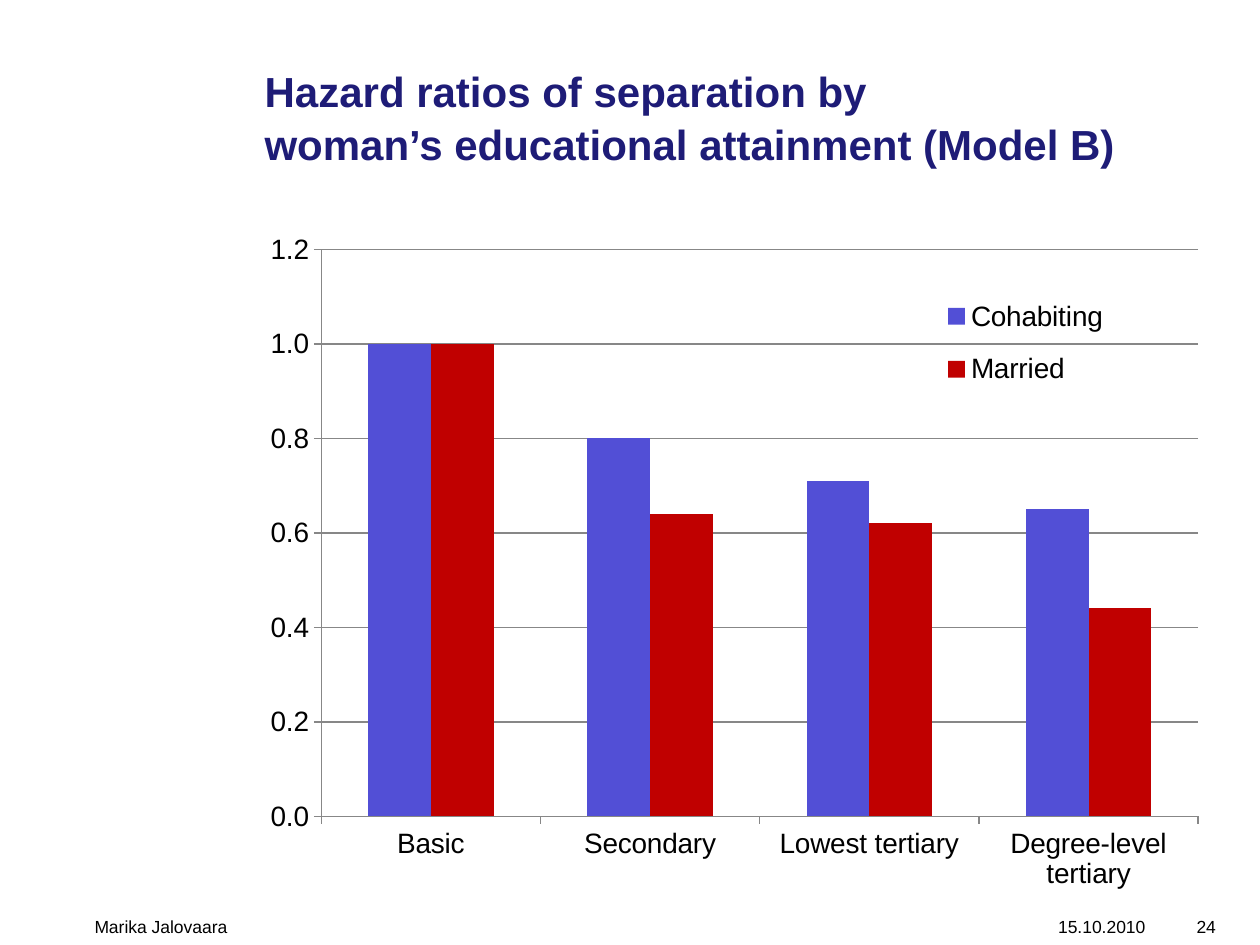
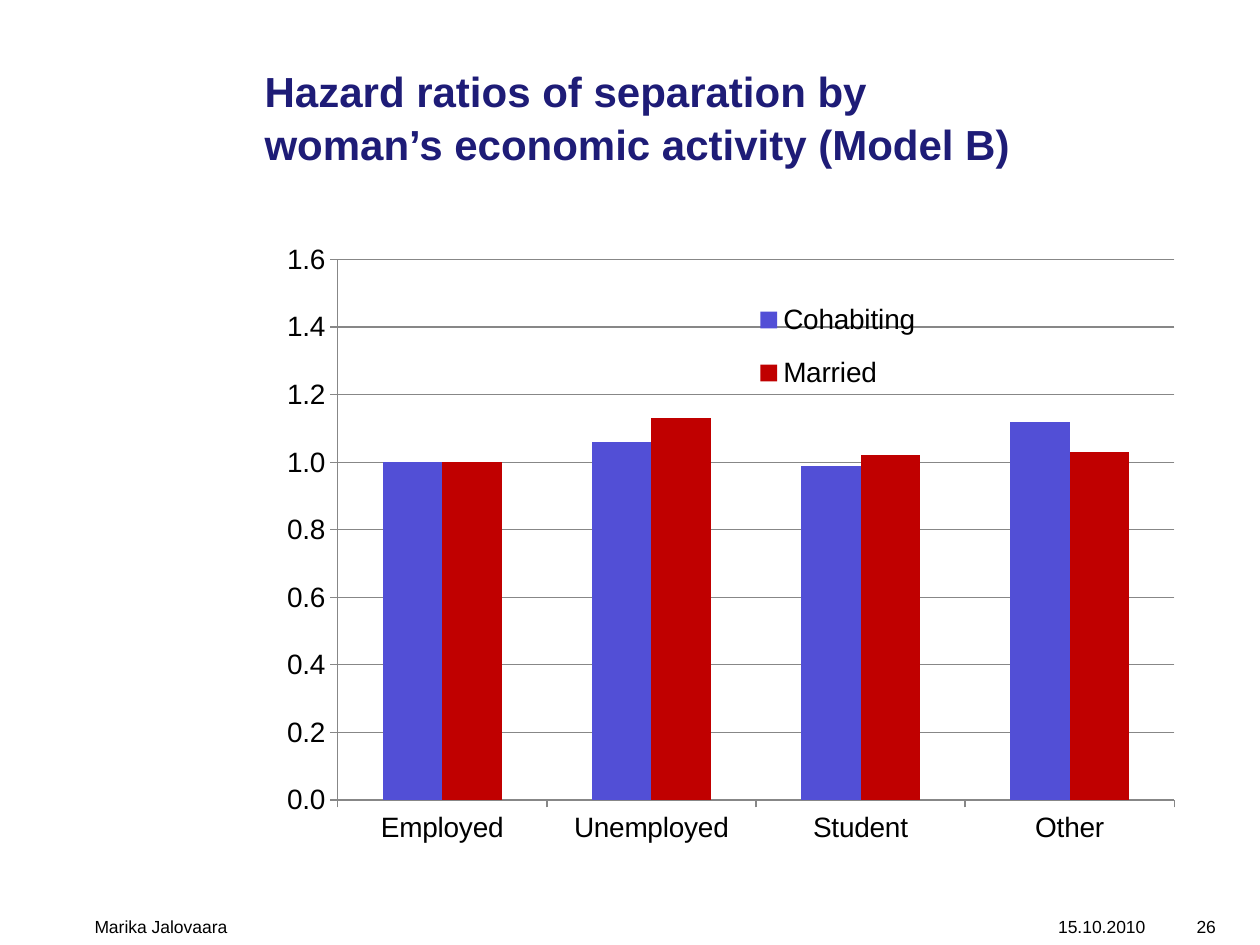
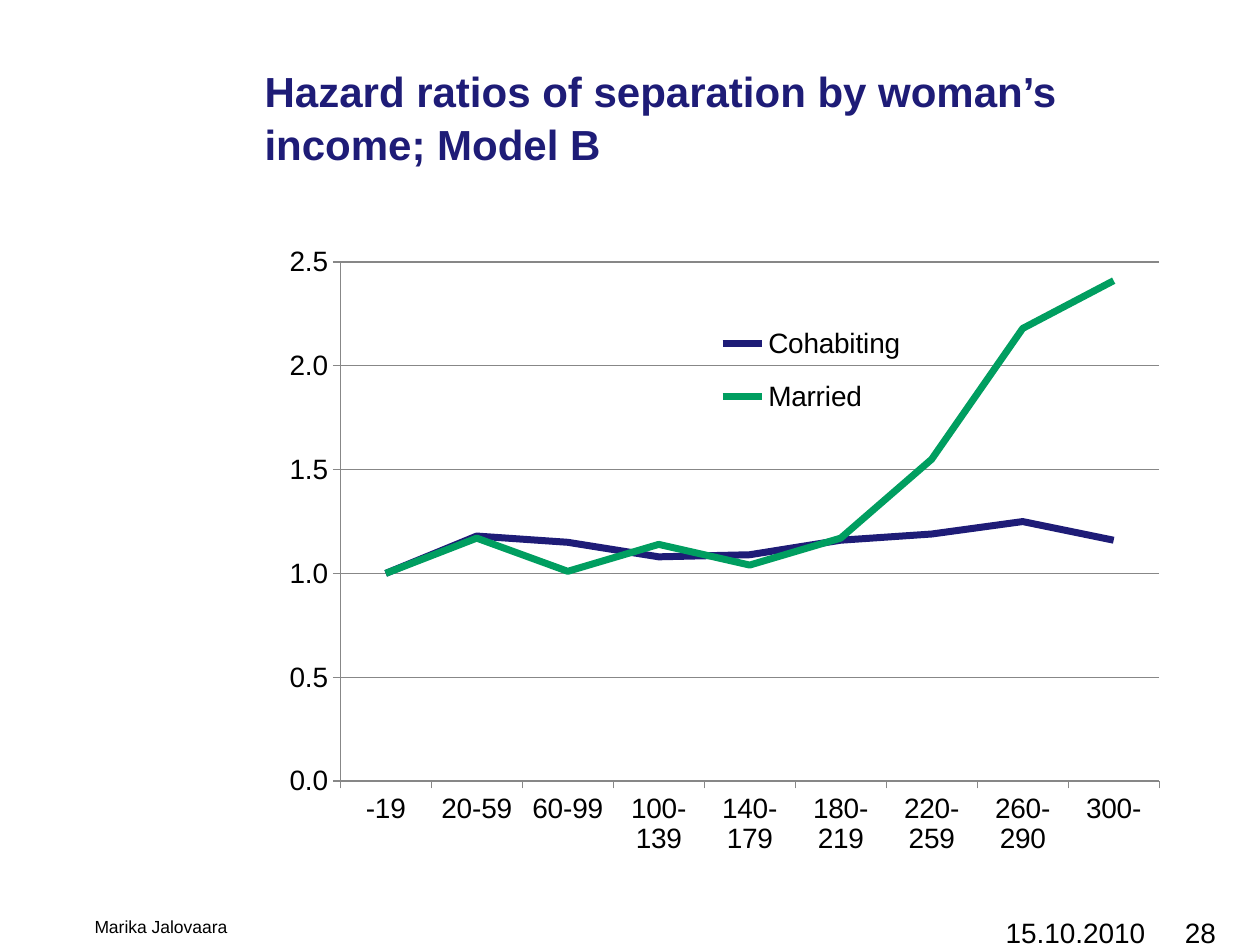
from lxml import etree
from pptx import Presentation
from pptx.chart.data import CategoryChartData
from pptx.dml.color import RGBColor
from pptx.enum.chart import XL_CHART_TYPE, XL_LEGEND_POSITION
from pptx.enum.text import MSO_ANCHOR, MSO_AUTO_SIZE, PP_ALIGN
from pptx.oxml.ns import qn
from pptx.util import Inches, Pt

COLORS = {
    "title": "1E1C77",
    "text": "000000",
    "axis": "878787",
    "blue": "524FD6",
    "red": "C00000",
    "navy": "1E1C77",
    "green": "009E60",
}
FONT = "Arial"
CHART_W, CHART_H = 7.67, 5.42


def write(tf, text, size=10, color="text", bold=False, align=PP_ALIGN.LEFT,
          anchor=MSO_ANCHOR.TOP, spacing=None):
    tf.word_wrap = True
    tf.auto_size = MSO_AUTO_SIZE.NONE
    tf.vertical_anchor = anchor
    p = tf.paragraphs[0]
    p.text = text
    p.alignment = align
    if spacing:
        p.line_spacing = Pt(spacing)
    for r in p.runs:
        r.font.name = FONT
        r.font.size = Pt(size)
        r.font.bold = bold
        r.font.color.rgb = RGBColor.from_string(COLORS[color])


def place(parent, index, box, inner=False):
    for old in parent.findall(qn("c:layout")):
        parent.remove(old)
    layout = etree.Element(qn("c:layout"))
    manual = etree.SubElement(layout, qn("c:manualLayout"))
    if inner:
        etree.SubElement(manual, qn("c:layoutTarget"), val="inner")
    for tag in ("xMode", "yMode"):
        etree.SubElement(manual, qn(f"c:{tag}"), val="edge")
    for tag, length, full in zip("xywh", box, (CHART_W, CHART_H) * 2):
        etree.SubElement(manual, qn(f"c:{tag}"), val=f"{length / full:.4f}")
    parent.insert(index, layout)


SLIDES = [
    {
        "title": "Hazard ratios of separation by\nwoman’s educational attainment (Model B)",
        "number": "24",
        "small": 10,
        "type": XL_CHART_TYPE.COLUMN_CLUSTERED,
        "cats": ["Basic", "Secondary", "Lowest tertiary", "Degree-level tertiary"],
        "series": [("Cohabiting", [1, 0.8, 0.71, 0.65], "blue"),
                   ("Married", [1, 0.64, 0.62, 0.44], "red")],
        "max": 1.2,
        "step": 0.2,
        "plot": (0.55, 0.23, 6.96, 4.5),
        "legend": (5.34, 0.46),
    },
    {
        "title": "Hazard ratios of separation by\nwoman’s economic activity (Model B)",
        "number": "26",
        "small": 10,
        "type": XL_CHART_TYPE.COLUMN_CLUSTERED,
        "cats": ["Employed", "Unemployed", "Student", "Other"],
        "series": [("Cohabiting", [1, 1.06, 0.99, 1.12], "blue"),
                   ("Married", [1, 1.13, 1.02, 1.03], "red")],
        "max": 1.6,
        "step": 0.2,
        "plot": (0.68, 0.31, 6.64, 4.29),
        "legend": (3.85, 0.49),
    },
    {
        "title": "Hazard ratios of separation by woman’s income; Model B",
        "number": "28",
        "small": 16,
        "type": XL_CHART_TYPE.LINE,
        "cats": ["-19", "20-59", "60-99", "100-139", "140-179", "180-219",
                 "220-259", "260-290", "300-"],
        "series": [("Cohabiting", [1, 1.18, 1.15, 1.08, 1.09, 1.16, 1.19, 1.25, 1.16], "navy"),
                   ("Married", [1, 1.17, 1.01, 1.14, 1.04, 1.17, 1.55, 2.18, 2.41], "green")],
        "max": 2.5,
        "step": 0.5,
        "plot": (0.7, 0.33, 6.5, 4.12),
        "legend": (3.64, 0.68),
    },
]

prs = Presentation()
prs.slide_width, prs.slide_height = Inches(10), Inches(7.5)

for item in SLIDES:
    s = prs.slides.add_slide(prs.slide_layouts[5])
    title = s.shapes.title
    title.left, title.top = Inches(2), Inches(0.17)
    title.width, title.height = Inches(7.67), Inches(1.22)
    write(title.text_frame, item["title"], size=24, color="title", bold=True,
          anchor=MSO_ANCHOR.BOTTOM, spacing=30)

    footers = [
        ("15.10.2010", 7.64, 1.45, item["small"], PP_ALIGN.RIGHT),
        ("Marika Jalovaara", 0.75, 6.85, 10, PP_ALIGN.LEFT),
        (item["number"], 9.1, 0.55, item["small"], PP_ALIGN.RIGHT),
    ]
    for text, left, width, size, align in footers:
        sp = s.shapes.add_textbox(Inches(left), Inches(7.22), Inches(width), Inches(0.22))
        tf = sp.text_frame
        tf.margin_left = tf.margin_right = 0
        write(tf, text, size=size, align=align)

    data = CategoryChartData(number_format="0.0")
    data.categories = item["cats"]
    for name, values, color in item["series"]:
        data.add_series(name, values)
    chart = s.shapes.add_chart(item["type"], Inches(2), Inches(1.75),
                               Inches(CHART_W), Inches(CHART_H), data).chart
    chart.has_title = False
    chart.font.name = FONT
    chart.font.size = Pt(16)
    chart.font.color.rgb = RGBColor.from_string(COLORS["text"])

    is_line = item["type"] == XL_CHART_TYPE.LINE
    plot = chart.plots[0]
    plot.vary_by_categories = False
    if not is_line:
        plot.gap_width = 150
    all_series = list(plot.series)
    for i, (series, (name, values, color)) in enumerate(zip(all_series, item["series"])):
        rgb = RGBColor.from_string(COLORS[color])
        if is_line:
            series.smooth = False
            series.format.line.width = Pt(4)
            series.format.line.color.rgb = rgb
        else:
            series.format.fill.solid()
            series.format.fill.fore_color.rgb = rgb
            order = series._element.find(qn("c:order"))
            order.set("val", str(len(all_series) - 1 - i))

    axis = chart.value_axis
    axis.minimum_scale, axis.maximum_scale = 0, item["max"]
    axis.major_unit = item["step"]
    axis.tick_labels.number_format = "0.0"
    axis.tick_labels.number_format_is_linked = False
    axis.has_major_gridlines = True
    for part in (axis, axis.major_gridlines, chart.category_axis):
        part.format.line.width = Pt(0.75)
        part.format.line.color.rgb = RGBColor.from_string(COLORS["axis"])

    chart.has_legend = True
    legend = chart.legend
    legend.position = XL_LEGEND_POSITION.RIGHT
    legend.include_in_layout = not is_line
    place(legend._element, 1, item["legend"] + (1.6, 1.02))
    place(chart._chartSpace.chart.plotArea, 0, item["plot"], inner=True)

prs.save("out.pptx")
